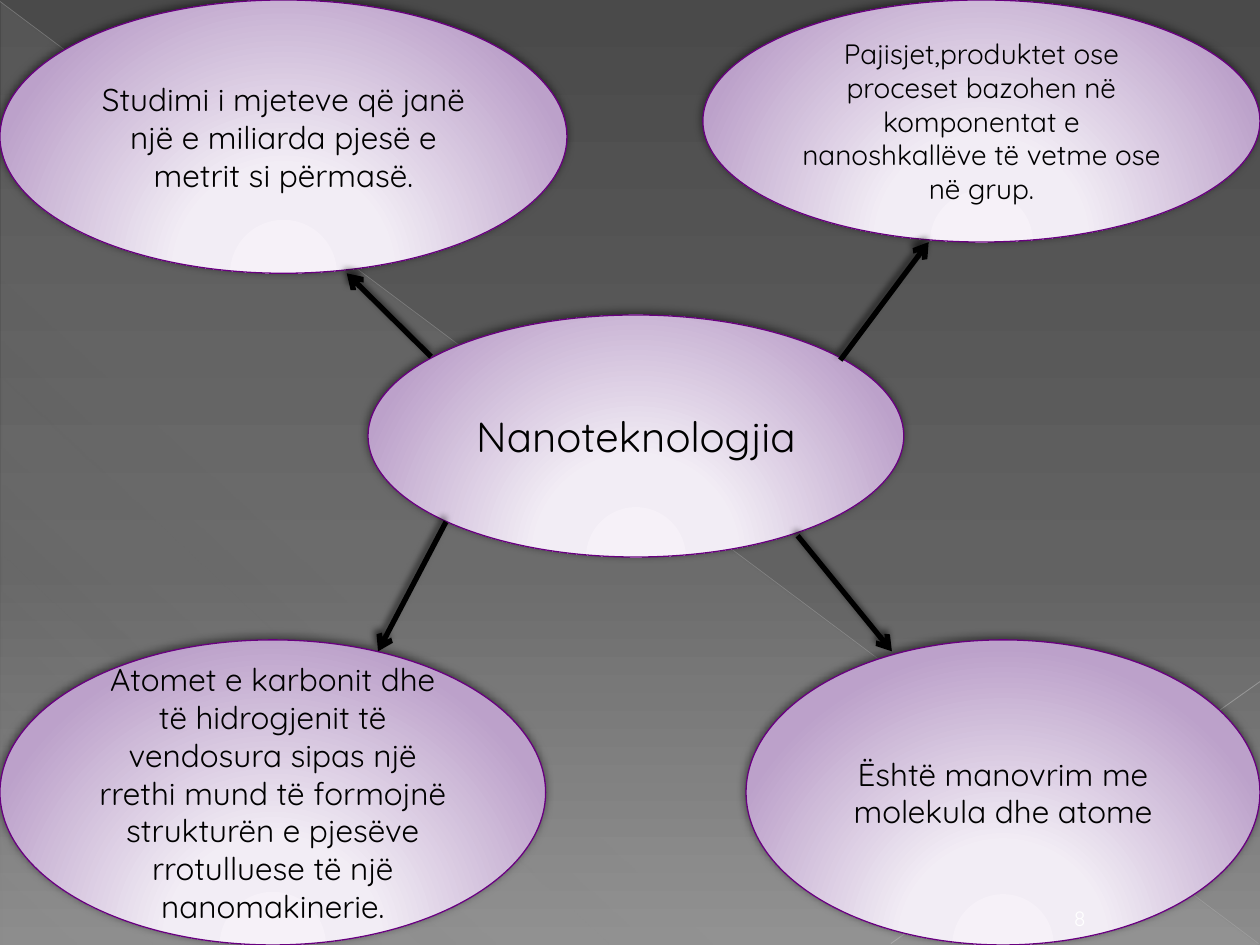
"""Builds a mind map slide about nanotechnology."""
from pptx import Presentation, util as u
from pptx.dml.color import RGBColor
from pptx.enum import shapes, text
from pptx.oxml import ns, parse_xml

rgb = RGBColor.from_string
FONT = "Quicksand"


def set_gradient(fill, stops, direction):
    """Fill with (position, colour, opacity) stops, all but colour in percent."""
    stop_xml = "".join(
        f'<a:gs pos="{pos * 1000}"><a:srgbClr val="{rgb(colour)}">'
        f'<a:alpha val="{opacity * 1000}"/></a:srgbClr></a:gs>'
        for pos, colour, opacity in stops)
    fill.background()
    parent = fill._xPr
    parent.replace(parent.find(ns.qn("a:noFill")), parse_xml(
        f'<a:gradFill {ns.nsdecls("a")} rotWithShape="1">'
        f'<a:gsLst>{stop_xml}</a:gsLst>{direction}</a:gradFill>'))


def set_shadow(item, opacity=0, blur=0, distance=0):
    """Give the item an outer shadow, or none when opacity is zero."""
    shadow = (f'<a:outerShdw blurRad="{u.Pt(blur)}" dist="{u.Pt(distance)}" dir="14700000" '
              f'rotWithShape="0"><a:srgbClr val="{rgb("000000")}">'
              f'<a:alpha val="{opacity * 1000}"/></a:srgbClr></a:outerShdw>') if opacity else ""
    item._element.spPr.append(parse_xml(
        f'<a:effectLst {ns.nsdecls("a")}>{shadow}</a:effectLst>'))


deck = Presentation()
deck.slide_width, deck.slide_height = u.Cm(25.4), u.Cm(19.05)
slide = deck.slides.add_slide(deck.slide_layouts[6])
set_gradient(slide.background.fill,
             [(0, "4A4A4A", 100), (60, "626262", 100), (100, "8C8C8C", 100)],
             '<a:lin ang="5400000" scaled="0"/>')

sheen = slide.shapes.add_shape(shapes.MSO_SHAPE.RIGHT_TRIANGLE,
                               u.Cm(0.03), u.Cm(0.05), u.Cm(25.35), u.Cm(19))
set_gradient(sheen.fill, [(0, "D2D2D2", 10), (70, "D2D2D2", 8), (100, "D2D2D2", 1)],
             '<a:lin ang="7980000" scaled="0"/>')
sheen.line.fill.background()
set_shadow(sheen)

for ends, colour, width, opacity in [
    ((0, 0.03, 25.37, 19.02), "BFBFBF", 0.39, 35),
    ((25.4, 13.74, 17.96, 19.02), "C6C6C6", 0.47, 45),
]:
    ray = slide.shapes.add_connector(shapes.MSO_CONNECTOR.STRAIGHT, *map(u.Cm, ends))
    ray.line.color.rgb = rgb(colour)
    ray.line.width = u.Pt(width)
    ray.line._ln.find(".//" + ns.qn("a:srgbClr")).append(
        parse_xml(f'<a:alpha {ns.nsdecls("a")} val="{opacity * 1000}"/>'))
    set_shadow(ray)

ideas = [
    ((7.42, 6.35, 10.8, 4.88), 24, "Nanoteknologjia"),
    ((14.17, 0, 11.23, 4.88), 16, "Pajisjet,produktet ose proceset bazohen në komponentat e "
                                  "nanoshkallëve të vetme ose në grup."),
    ((0, 0, 11.43, 5.51), 18, "Studimi i mjeteve që janë një e miliarda pjesë e "
                              "metrit si përmasë."),
    ((15.04, 12.9, 10.36, 6.15), 18, "Është manovrim me molekula dhe atome"),
    ((0, 12.9, 11, 6.15), 18, "Atomet e karbonit dhe të hidrogjenit të vendosura sipas një "
                              "rrethi mund të formojnë strukturën e pjesëve rrotulluese të "
                              "një nanomakinerie."),
]
for place, size, wording in ideas:
    idea = slide.shapes.add_shape(shapes.MSO_SHAPE.OVAL, *map(u.Cm, place))
    set_gradient(idea.fill,
                 [(0, "F6F1F8", 100), (34, "F2EDF5", 100), (100, "BCA1CA", 100)],
                 '<a:path path="circle"><a:fillToRect l="50000" t="155000" '
                 'r="50000" b="-55000"/></a:path>')
    idea.line.color.rgb = rgb("68007F")
    idea.line.width = u.Pt(0.75)
    set_shadow(idea, 50, 5, 2)
    idea.text_frame.vertical_anchor = text.MSO_ANCHOR.MIDDLE
    line = idea.text_frame.paragraphs[0]
    line.text = wording
    line.alignment = text.PP_ALIGN.CENTER
    line.font.name, line.font.size = FONT, u.Pt(size)
    line.font.color.rgb = rgb("000000")

for ends in [
    (16.94, 7.26, 18.72, 4.88),
    (8.69, 7.19, 6.99, 5.51),
    (16.08, 10.8, 17.98, 13.13),
    (8.99, 10.52, 7.62, 13.13),
]:
    arrow = slide.shapes.add_connector(shapes.MSO_CONNECTOR.STRAIGHT, *map(u.Cm, ends))
    arrow.line.color.rgb = rgb("000000")
    arrow.line.width = u.Pt(3)
    arrow.line._ln.append(parse_xml(f'<a:tailEnd {ns.nsdecls("a")} type="arrow"/>'))
    set_shadow(arrow, 60, 4, 3)

page = slide.shapes.add_textbox(u.Cm(21.07), u.Cm(18), u.Cm(1.4), u.Cm(1))
page.text_frame.word_wrap = True
page.text_frame.vertical_anchor = text.MSO_ANCHOR.MIDDLE
number = page.text_frame.paragraphs[0]
number.text = "8"
number.alignment = text.PP_ALIGN.CENTER
number.font.name, number.font.size = FONT, u.Pt(12)
number.font.color.rgb = rgb("FFFFFF")

deck.save("out.pptx")
